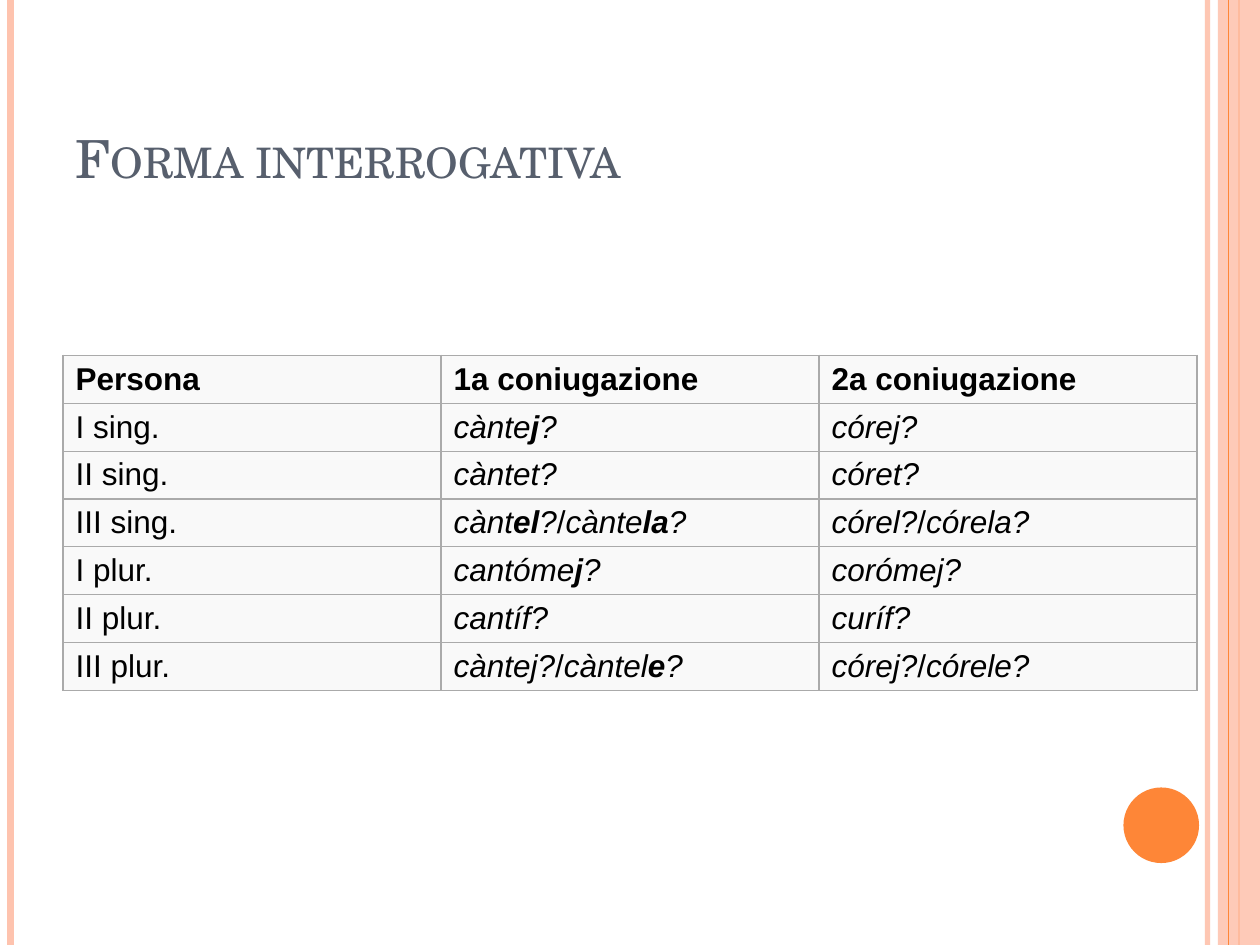
from lxml import etree
from pptx import Presentation
from pptx.dml.color import RGBColor
from pptx.enum.shapes import MSO_CONNECTOR, MSO_SHAPE
from pptx.enum.text import MSO_ANCHOR, MSO_AUTO_SIZE, PP_ALIGN
from pptx.oxml.ns import qn
from pptx.util import Pt

STRAIGHT = MSO_CONNECTOR.STRAIGHT
RECTANGLE, OVAL = MSO_SHAPE.RECTANGLE, MSO_SHAPE.OVAL
MIDDLE, BOTTOM = MSO_ANCHOR.MIDDLE, MSO_ANCHOR.BOTTOM
LEFT = PP_ALIGN.LEFT
NO_FIT = MSO_AUTO_SIZE.NONE

COLOURS = {
    "paper": "FFFFFF",
    "peach": "FEC3AE",
    "orange": "FE8637",
    "title": "575F6D",
    "text": "000000",
    "cell": "F9F9F9",
    "border": "AAAAAA",
}
TITLE_FONT, TABLE_FONT = "TeX Gyre Schola", "Arial"
SLIDE_WIDTH, SLIDE_HEIGHT = 720, 540
ROW_HEIGHT = 27.4
CONJUGATION = [
    ("Persona", "1a coniugazione", "2a coniugazione"),
    ("I sing.", "cànte*j*?", "córej?"),
    ("II sing.", "càntet?", "córet?"),
    ("III sing.", "cànt*el*?/cànte*la*?", "córel?/córela?"),
    ("I plur.", "cantóme*j*?", "corómej?"),
    ("II plur.", "cantíf?", "curíf?"),
    ("III plur.", "càntej?/càntel*e*?", "córej?/córele?"),
]


def colour(name):
    """Return the named colour of the palette."""
    return RGBColor.from_string(COLOURS[name])


def set_values(target, **values):
    """Set each given format value on the target."""
    for name, value in values.items():
        setattr(target, name, value)


def set_alpha(fill_parent, percent):
    """Make the solid fill below an element partly transparent."""
    tint = next(fill_parent.iter(qn("a:srgbClr")))
    etree.SubElement(tint, qn("a:alpha"), val=str(percent * 1000))


def add_stripe(page, x, height, tint, width, alpha=100):
    """Draw a vertical line from the top of the page."""
    stripe = page.shapes.add_connector(STRAIGHT, Pt(x), Pt(0), Pt(x), Pt(height))
    stripe.line.color.rgb = colour(tint)
    stripe.line.width = Pt(width)
    properties = stripe._element.spPr
    etree.SubElement(properties, qn("a:effectLst"))
    if alpha < 100:
        set_alpha(properties, alpha)


def add_solid(page, kind, box, tint):
    """Add a plain filled shape without an outline."""
    shape = page.shapes.add_shape(kind, *map(Pt, box))
    shape.shadow.inherit = False
    shape.fill.solid()
    shape.fill.fore_color.rgb = colour(tint)
    shape.line.fill.background()
    return shape


def add_decoration(page, box):
    """Place the side stripes and the disc within the page box."""
    left, top, width, height = box
    right = left + width
    add_stripe(page, right - 30, height, "peach", 3, 93)
    add_stripe(page, left + 6, height, "peach", 4.5)
    add_stripe(page, right - 12, height, "orange", 1.5)
    band = add_solid(page, RECTANGLE, (right - 24, top, 24, height), "peach")
    set_alpha(band._element.spPr, 87)
    add_stripe(page, right - 18, height, "orange", 0.75)
    add_solid(page, OVAL, (right - 78, top + height - 90, 43.2, 43.2), "orange")


def add_title(page, box, text):
    """Move the title placeholder to its box and format its text."""
    title = page.shapes.title
    left, top, width, height = map(Pt, box)
    set_values(title, left=left, top=top, width=width, height=height)
    frame = title.text_frame
    set_values(frame, text=text, word_wrap=True, vertical_anchor=BOTTOM, auto_size=NO_FIT)
    para = frame.paragraphs[0]
    para.alignment = LEFT
    span = para.runs[0]
    set_values(span.font, name=TITLE_FONT, size=Pt(30))
    span.font.color.rgb = colour("title")
    span.font._element.set("cap", "small")


def add_span(para, text, bold, italic):
    """Add one run of table text."""
    span = para.add_run()
    span.text = text
    set_values(span.font, name=TABLE_FONT, size=Pt(18), bold=bold, italic=italic)
    span.font.color.rgb = colour("text")


def write_forms(para, text, header, italic):
    """Write forms split by upright slashes, with endings between stars in bold."""
    for position, form in enumerate(text.split("/")):
        if position:
            add_span(para, "/", False, False)
        for index, part in enumerate(form.split("*")):
            if part:
                add_span(para, part, header or index % 2 == 1, italic)


def set_borders(cell):
    """Give all four sides of a cell a thin line."""
    properties = cell._tc.get_or_add_tcPr()
    for index, side in enumerate(("lnL", "lnR", "lnT", "lnB")):
        line = etree.Element(qn(f"a:{side}"), w=str(Pt(0.75)))
        fill = etree.SubElement(line, qn("a:solidFill"))
        etree.SubElement(fill, qn("a:srgbClr"), val=COLOURS["border"])
        properties.insert(index, line)


def add_conjugation_table(page, box, rows):
    """Build the table of verb forms in its box."""
    table = page.shapes.add_table(len(rows), len(rows[0]), *map(Pt, box)).table
    set_values(table, first_row=False, horz_banding=False)
    for row_index, texts in enumerate(rows):
        table.rows[row_index].height = Pt(box[3] / len(rows))
        for column_index, text in enumerate(texts):
            cell = table.cell(row_index, column_index)
            cell.vertical_anchor = MIDDLE
            cell.fill.solid()
            cell.fill.fore_color.rgb = colour("cell")
            set_borders(cell)
            header = row_index == 0
            italic = not header and column_index > 0
            write_forms(cell.text_frame.paragraphs[0], text, header, italic)


def main():
    """Build and save the deck."""
    deck = Presentation()
    set_values(deck, slide_width=Pt(SLIDE_WIDTH), slide_height=Pt(SLIDE_HEIGHT))
    page = deck.slides.add_slide(deck.slide_layouts[5])
    page.background.fill.solid()
    page.background.fill.fore_color.rgb = colour("paper")
    add_decoration(page, (0, 0, SLIDE_WIDTH, SLIDE_HEIGHT))
    add_title(page, (36, 21.6, 588, 90), "Forma interrogativa")
    table_box = (36, 203, 648, ROW_HEIGHT * len(CONJUGATION))
    add_conjugation_table(page, table_box, CONJUGATION)
    deck.save("out.pptx")


if __name__ == "__main__":
    main()
